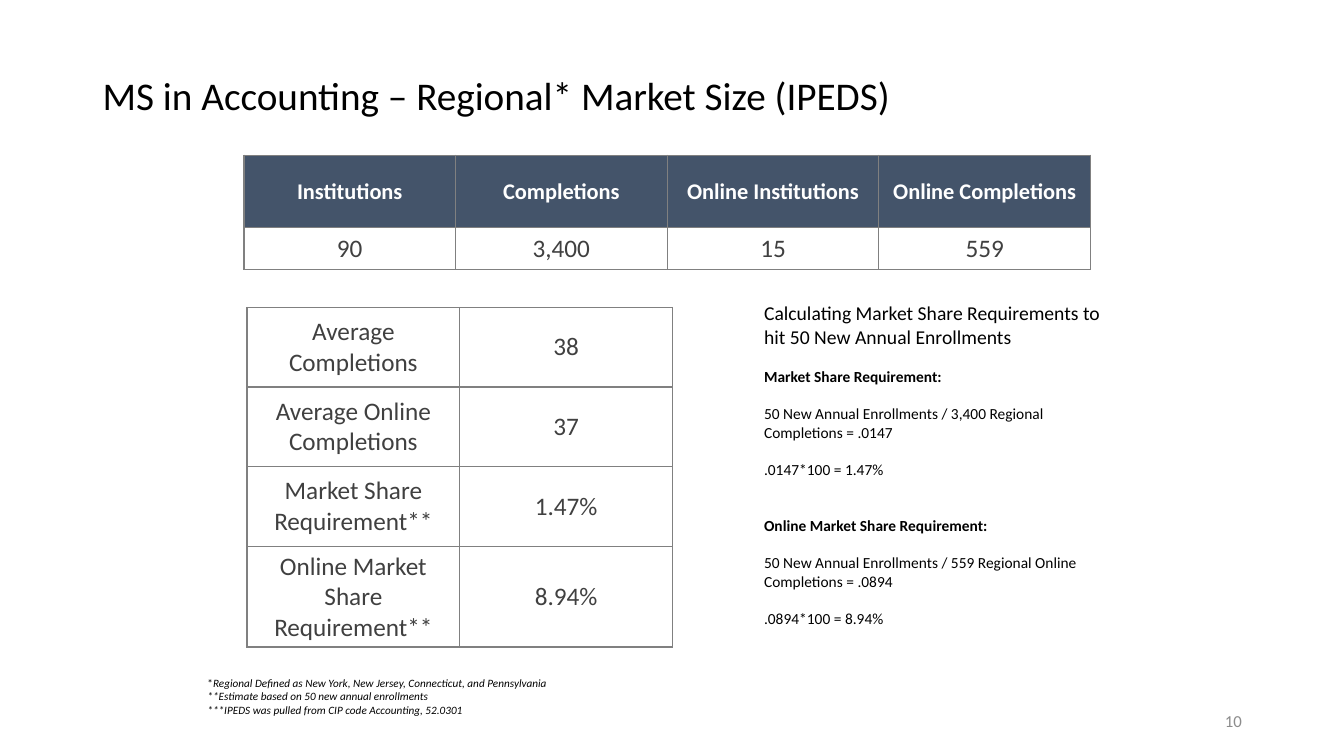
from lxml.etree import SubElement
from pptx import Presentation
from pptx.dml.color import RGBColor
from pptx.enum.text import MSO_ANCHOR, PP_ALIGN
from pptx.oxml.ns import qn
from pptx.util import Inches, Pt


def color(value):
    return RGBColor.from_string(value)


class MarketSlide:
    font_name = "Calibri"
    black, white = "000000", "FFFFFF"
    header_fill, body_color, border_color = "44546A", "404040", "808080"
    number_color = "8C8C8C"

    def __init__(self, presentation):
        self.width = presentation.slide_width
        self.height = presentation.slide_height
        self.slide = presentation.slides.add_slide(presentation.slide_layouts[6])

    def across(self, percent):
        return round(self.width * percent / 100)

    def down(self, percent):
        return round(self.height * percent / 100)

    def style(self, paragraph, size, text_color, bold=False, italic=False,
              align=PP_ALIGN.LEFT, before=0, line_spacing=1.0):
        paragraph.alignment = align
        paragraph.space_before = Pt(before)
        paragraph.line_spacing = line_spacing
        font = paragraph.font
        font.name, font.size = self.font_name, Pt(size)
        font.bold, font.italic = bold, italic
        font.color.rgb = color(text_color)

    def text(self, left, top, width, height, lines, text_color=black, anchor=MSO_ANCHOR.TOP):
        box = self.slide.shapes.add_textbox(
            self.across(left), self.down(top), self.across(width), self.down(height))
        frame = box.text_frame
        frame.word_wrap = True
        frame.vertical_anchor = anchor
        for index, (content, options) in enumerate(lines):
            paragraph = frame.add_paragraph() if index else frame.paragraphs[0]
            paragraph.add_run().text = content
            self.style(paragraph, text_color=text_color, **options)
        return frame

    def border(self, cell):
        properties = cell._tc.get_or_add_tcPr()
        for position, side in enumerate(("a:lnL", "a:lnR", "a:lnT", "a:lnB")):
            line = SubElement(properties, qn(side), w=str(Pt(1)))
            fill = SubElement(line, qn("a:solidFill"))
            SubElement(fill, qn("a:srgbClr"), val=self.border_color)
            properties.remove(line)
            properties.insert(position, line)

    def table(self, left, top, width, row_heights, rows, header=False):
        column_count = len(rows[0])
        table = self.slide.shapes.add_table(
            len(rows), column_count, self.across(left), self.down(top),
            self.across(width), self.down(sum(row_heights))).table
        table.first_row = header
        table.horz_banding = False
        for column in table.columns:
            column.width = self.across(width / column_count)
        for row_index, (height, values) in enumerate(zip(row_heights, rows)):
            table.rows[row_index].height = self.down(height)
            is_header = header and row_index == 0
            for column_index, value in enumerate(values):
                cell = table.cell(row_index, column_index)
                cell.text = value
                cell.vertical_anchor = MSO_ANCHOR.MIDDLE
                cell.fill.solid()
                cell.fill.fore_color.rgb = color(self.header_fill if is_header else self.white)
                self.border(cell)
                self.style(cell.text_frame.paragraphs[0], 16 if is_header else 18,
                           self.white if is_header else self.body_color,
                           bold=is_header, align=PP_ALIGN.CENTER)


def main():
    presentation = Presentation()
    presentation.slide_width, presentation.slide_height = Inches(13.33), Inches(7.5)
    market = MarketSlide(presentation)

    market.text(6.9, 5.33, 86.25, 15.2,
                [("MS in Accounting – Regional* Market Size (IPEDS)",
                  {"size": 28, "line_spacing": 0.9})], anchor=MSO_ANCHOR.MIDDLE)
    market.text(70.65, 92.67, 22.5, 5.33, [("10", {"size": 12, "align": PP_ALIGN.RIGHT})],
                market.number_color, MSO_ANCHOR.MIDDLE)

    market.table(18.15, 20.53, 63, [9.6, 5.53], [
        ["Institutions", "Completions", "Online Institutions", "Online Completions"],
        ["90", "3,400", "15", "559"],
    ], header=True)
    market.table(18.38, 40.67, 31.66, [10.53, 10.53, 10.53, 13.33], [
        ["Average Completions", "38"],
        ["Average Online Completions", "37"],
        ["Market Share Requirement**", "1.47%"],
        ["Online Market Share Requirement**", "8.94%"],
    ])

    note = {"size": 8, "italic": True}
    footnotes = market.text(14.7, 88.8, 27.16, 8.8, [
        ("*", {"size": 8}),
        ("**Estimate based on 50 new annual enrollments", note),
        ("***IPEDS was pulled from CIP code Accounting, 52.0301", note),
    ])
    region = footnotes.paragraphs[0].add_run()
    region.text = "Regional Defined as New York, New Jersey, Connecticut, and Pennsylvania"
    region.font.italic = True

    blank_line = 13.4
    step = {"size": 11, "before": blank_line}
    heading = {**step, "bold": True}
    market.text(56.11, 39.2, 27.76, 54.27, [
        ("Calculating Market Share Requirements to hit 50 New Annual Enrollments", {"size": 14}),
        ("Market Share Requirement:", heading),
        ("50 New Annual Enrollments / 3,400 Regional Completions = .0147", step),
        (".0147*100 = 1.47%", step),
        ("Online Market Share Requirement:", {**heading, "before": 2 * blank_line}),
        ("50 New Annual Enrollments / 559 Regional Online Completions = .0894", step),
        (".0894*100 = 8.94%", step),
    ])
    presentation.save("out.pptx")


if __name__ == "__main__":
    main()
